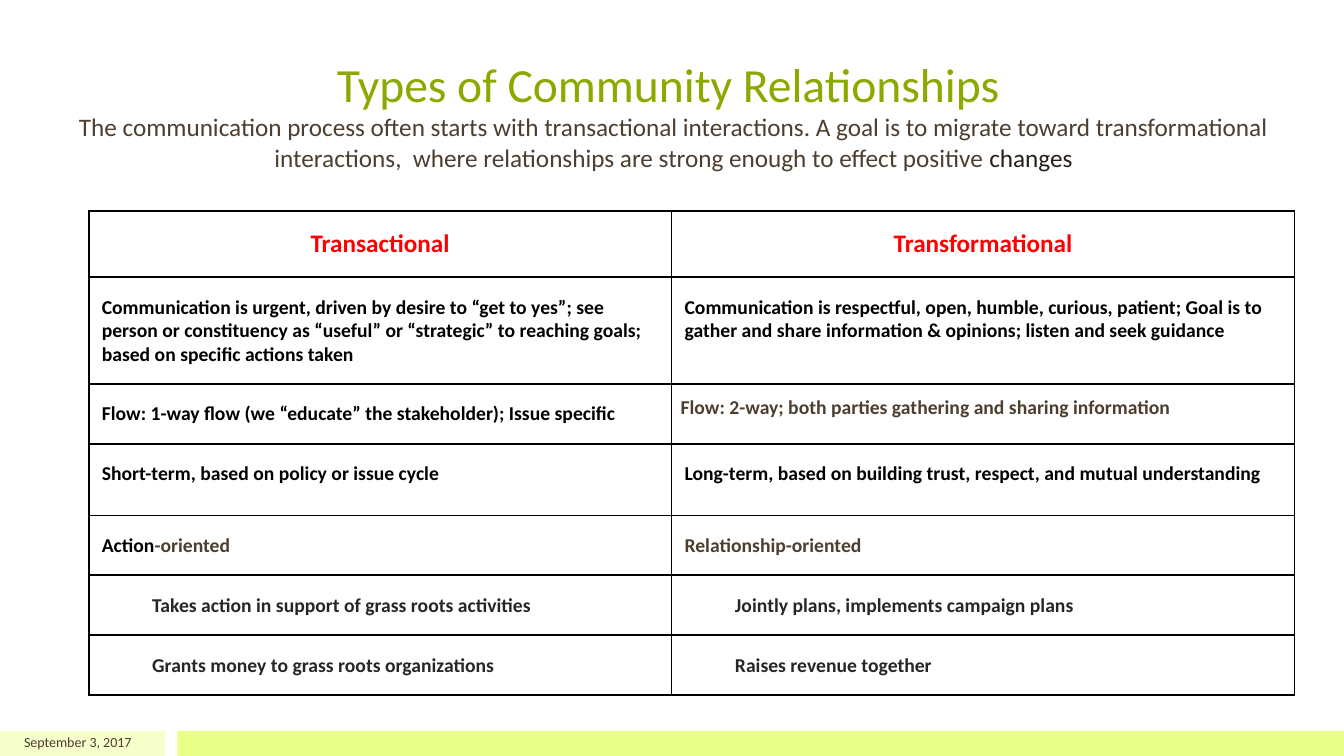
import pptx
import pptx.dml.color
import pptx.enum.shapes
import pptx.enum.text
import pptx.oxml
import pptx.oxml.ns
import pptx.util
from pptx.util import Inches, Pt

FONT = "Calibri"
GREEN, BROWN, DARK_BROWN = "8BAA00", "4D3E2F", "261F18"
RED, BLACK, GREY, WHITE = "FF0000", "000000", "262626", "FFFFFF"

TITLE = "Types of Community Relationships "
SUBTITLE = [
    ("The communication process often starts with transactional interactions. "
     "A goal is to migrate toward transformational interactions,  where "
     "relationships are strong enough to effect positive ", BROWN),
    ("changes", DARK_BROWN),
]
DATE = "September 3, 2017"
FOOTER_BARS = [(0, 1.64, "F6FFCC"), (1.76, 11.57, "E9FF88")]  # left, width, fill

COLUMN_WIDTHS = (5.78, 6.18)
# Row height, then the (text, colour) runs of each cell
ROWS = [
    (0.66, [("Transactional", RED)], [("Transformational", RED)]),
    (1.06,
     [("Communication is urgent, driven by desire to “get to yes”; see person or "
       "constituency as “useful” or “strategic” to reaching goals; based on "
       "specific actions taken", BLACK)],
     [("Communication is respectful, open, humble, curious, patient; Goal is to "
       "gather and share information & opinions; listen and seek guidance", BLACK)]),
    (0.59,
     [("Flow: 1-way flow (we “educate” the stakeholder); Issue specific", BLACK)],
     [("Flow: 2-way; both parties gathering and sharing information", BROWN)]),
    (0.71,
     [("Short-term, based on policy or issue cycle", BLACK)],
     [("Long-term, based on building trust, respect, and mutual understanding", BLACK)]),
    (0.59,
     [("Action", BLACK), ("-oriented", BROWN)],
     [("Relationship-oriented", BROWN)]),
    (0.59,
     [("Takes action in support of grass roots activities", GREY)],
     [("Jointly plans, implements campaign plans", GREY)]),
    (0.59,
     [("Grants money to grass roots organizations", GREY)],
     [("Raises revenue together", GREY)]),
]
FIRST_INDENTED_ROW = 5
CELL_MARGINS = (0.13, 0.18)
TIGHT_CELL, TIGHT_MARGINS = (2, 1), (0.09, 0.12)


def rgb(color):
    return pptx.dml.color.RGBColor.from_string(color)


def add_run(p, text, color, size):
    r = p.add_run()
    r.text = text
    r.font.size = Pt(size)
    r.font.color.rgb = rgb(color)


def add_borders(cell):
    """Draw a black line on all four sides of a table cell."""
    tc_pr = cell._tc.get_or_add_tcPr()
    for i, side in enumerate("LRTB"):
        tc_pr.insert(i, pptx.oxml.parse_xml(
            f'<a:ln{side} {pptx.oxml.ns.nsdecls("a")} w="{Pt(1.5)}"><a:solidFill>'
            f'<a:srgbClr val="{BLACK}"/></a:solidFill></a:ln{side}>'))


def add_footer(s):
    for left, width, fill in FOOTER_BARS:
        sp = s.shapes.add_shape(pptx.enum.shapes.MSO_SHAPE.RECTANGLE, Inches(left),
                                Inches(7.25), Inches(width), Inches(0.25))
        sp.shadow.inherit = False
        sp.fill.solid()
        sp.fill.fore_color.rgb = rgb(fill)
        sp.line.fill.background()
    sp = s.shapes.add_textbox(Inches(0.14), Inches(7.23), Inches(1.27), Inches(0.27))
    sp.text_frame.word_wrap = False
    p = sp.text_frame.paragraphs[0]
    p.font.name = FONT
    add_run(p, DATE, BROWN, 10)


def add_heading(s):
    sp = s.shapes.title
    sp.left, sp.top, sp.width, sp.height = map(Inches, (0.64, 0.48, 12.08, 1.29))
    tf = sp.text_frame
    tf.word_wrap = True
    tf.auto_size = pptx.enum.text.MSO_AUTO_SIZE.NONE
    tf.vertical_anchor = pptx.enum.text.MSO_ANCHOR.MIDDLE
    p = tf.paragraphs[0]
    p.alignment = pptx.enum.text.PP_ALIGN.CENTER
    p.font.name = FONT
    add_run(p, TITLE, GREEN, 34)
    p.add_line_break()
    for text, color in SUBTITLE:
        add_run(p, text, color, 18)


def fill_cell(cell, runs, row, column):
    cell.fill.solid()
    cell.fill.fore_color.rgb = rgb(WHITE)
    add_borders(cell)
    side, end = TIGHT_MARGINS if (row, column) == TIGHT_CELL else CELL_MARGINS
    cell.margin_left = cell.margin_right = Inches(side)
    cell.margin_top = cell.margin_bottom = Inches(end)
    p = cell.text_frame.paragraphs[0]
    p.font.name = FONT
    p.font.bold = True
    if row == 0:
        p.alignment = pptx.enum.text.PP_ALIGN.CENTER
    if row >= FIRST_INDENTED_ROW:
        p.level = 1
        p_pr = p._p.get_or_add_pPr()
        p_pr.set("marL", str(Inches(0.5)))
        p_pr.set("indent", "0")
    for text, color in runs:
        add_run(p, text, color, 18 if row == 0 else 14)


def add_comparison(s):
    heights = [row[0] for row in ROWS]
    table = s.shapes.add_table(len(ROWS), len(COLUMN_WIDTHS), Inches(0.88), Inches(2.09),
                               Inches(sum(COLUMN_WIDTHS)), Inches(sum(heights))).table
    table.first_row = table.horz_banding = False
    for column, width in zip(table.columns, COLUMN_WIDTHS):
        column.width = Inches(width)
    for i, (height, *cells) in enumerate(ROWS):
        table.rows[i].height = Inches(height)
        for j, runs in enumerate(cells):
            fill_cell(table.cell(i, j), runs, i, j)


def main():
    prs = pptx.Presentation()
    prs.slide_width, prs.slide_height = Inches(13.33), Inches(7.5)
    s = prs.slides.add_slide(prs.slide_layouts.get_by_name("Title Only"))
    add_footer(s)
    add_comparison(s)
    add_heading(s)
    prs.save("out.pptx")


if __name__ == "__main__":
    main()
